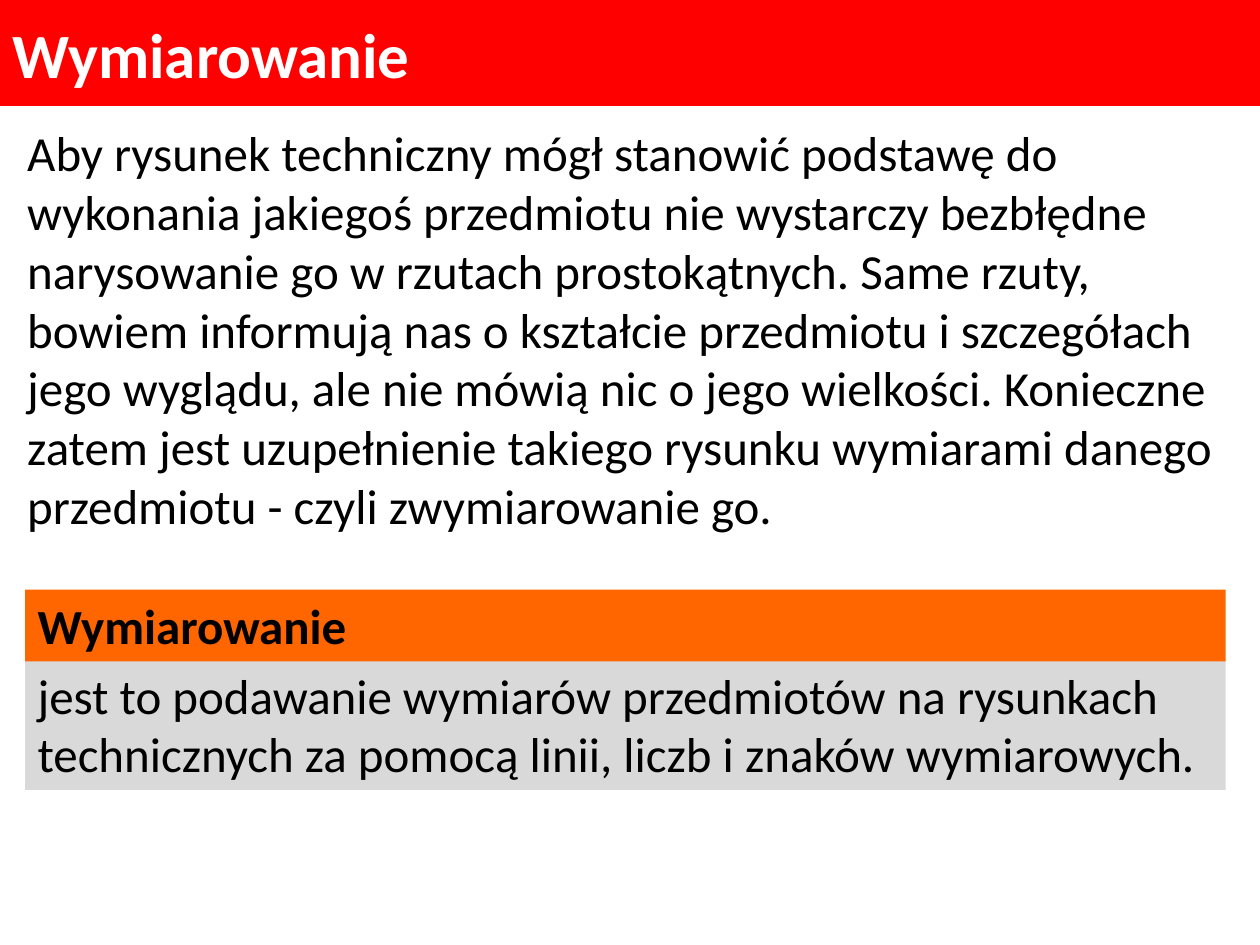
import pptx
import pptx.dml.color
import pptx.enum.shapes
import pptx.enum.text
import pptx.util

Pt = pptx.util.Pt
ANCHOR = pptx.enum.text.MSO_ANCHOR
AUTO_SIZE = pptx.enum.text.MSO_AUTO_SIZE

INTRO = (
    "Aby rysunek techniczny mógł stanowić podstawę do wykonania jakiegoś "
    "przedmiotu nie wystarczy bezbłędne narysowanie go w rzutach prostokątnych. "
    "Same rzuty, bowiem informują nas o kształcie przedmiotu i szczegółach jego "
    "wyglądu, ale nie mówią nic o jego wielkości. Konieczne zatem jest "
    "uzupełnienie takiego rysunku wymiarami danego przedmiotu - czyli "
    "zwymiarowanie go."
)
TERM = "Wymiarowanie"
DEFINITION = (
    "jest to podawanie wymiarów przedmiotów na rysunkach technicznych "
    "za pomocą linii, liczb i znaków wymiarowych."
)


def color(code):
    return pptx.dml.color.RGBColor.from_string(code)


def write_text(shape, text, size=28, ink="000000", bold=False, anchor=ANCHOR.TOP):
    frame = shape.text_frame
    frame.word_wrap = True
    frame.auto_size = AUTO_SIZE.NONE
    frame.vertical_anchor = anchor
    para = frame.paragraphs[0]
    para.alignment = pptx.enum.text.PP_ALIGN.LEFT
    span = para.add_run()
    span.text = text
    span.font.name = "Calibri"
    span.font.size = Pt(size)
    span.font.bold = bold
    span.font.color.rgb = color(ink)


def paint(shape, fill):
    shape.fill.solid()
    shape.fill.fore_color.rgb = color(fill)
    shape.line.fill.background()


def add_heading(page, left, top, width, height):
    title = page.shapes.title
    title.left, title.top = Pt(left), Pt(top)
    title.width, title.height = Pt(width), Pt(height)
    paint(title, "FF0000")
    write_text(title, TERM, size=36, ink="FFFFFF", bold=True, anchor=ANCHOR.MIDDLE)


def add_intro(page, left, top, width, height):
    box = page.shapes.add_textbox(Pt(left), Pt(top), Pt(width), Pt(height))
    write_text(box, INTRO)


def add_panel(page, left, top, width, height, fill, text, bold=False):
    panel = page.shapes.add_shape(
        pptx.enum.shapes.MSO_SHAPE.RECTANGLE, Pt(left), Pt(top), Pt(width), Pt(height)
    )
    panel.shadow.inherit = False
    paint(panel, fill)
    write_text(panel, text, bold=bold)


def add_definition(page, left, top, width, height):
    term_height = 41
    body_top = 39.5
    add_panel(page, left, top + body_top, width, height - body_top, "D9D9D9", DEFINITION)
    add_panel(page, left, top, width, term_height, "FF6600", TERM, bold=True)


def main():
    deck = pptx.Presentation()
    deck.slide_width, deck.slide_height = Pt(720), Pt(540)
    page = deck.slides.add_slide(deck.slide_layouts.get_by_name("Title Only"))
    page.background.fill.solid()
    page.background.fill.fore_color.rgb = color("FFFFFF")
    add_heading(page, 0, 0, 720, 60.5)
    add_intro(page, 8.5, 66.5, 705.5, 245)
    add_definition(page, 14.4, 337, 686, 114.4)
    deck.save("out.pptx")


if __name__ == "__main__":
    main()
